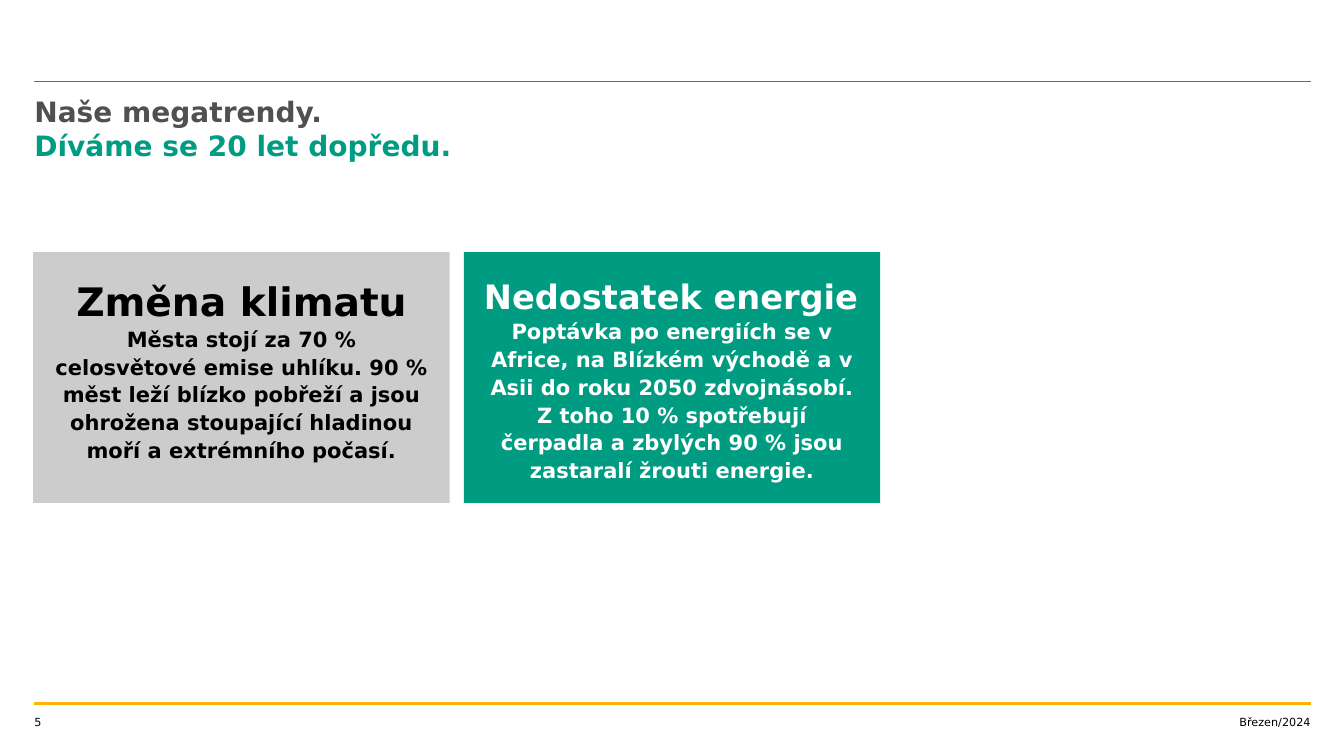
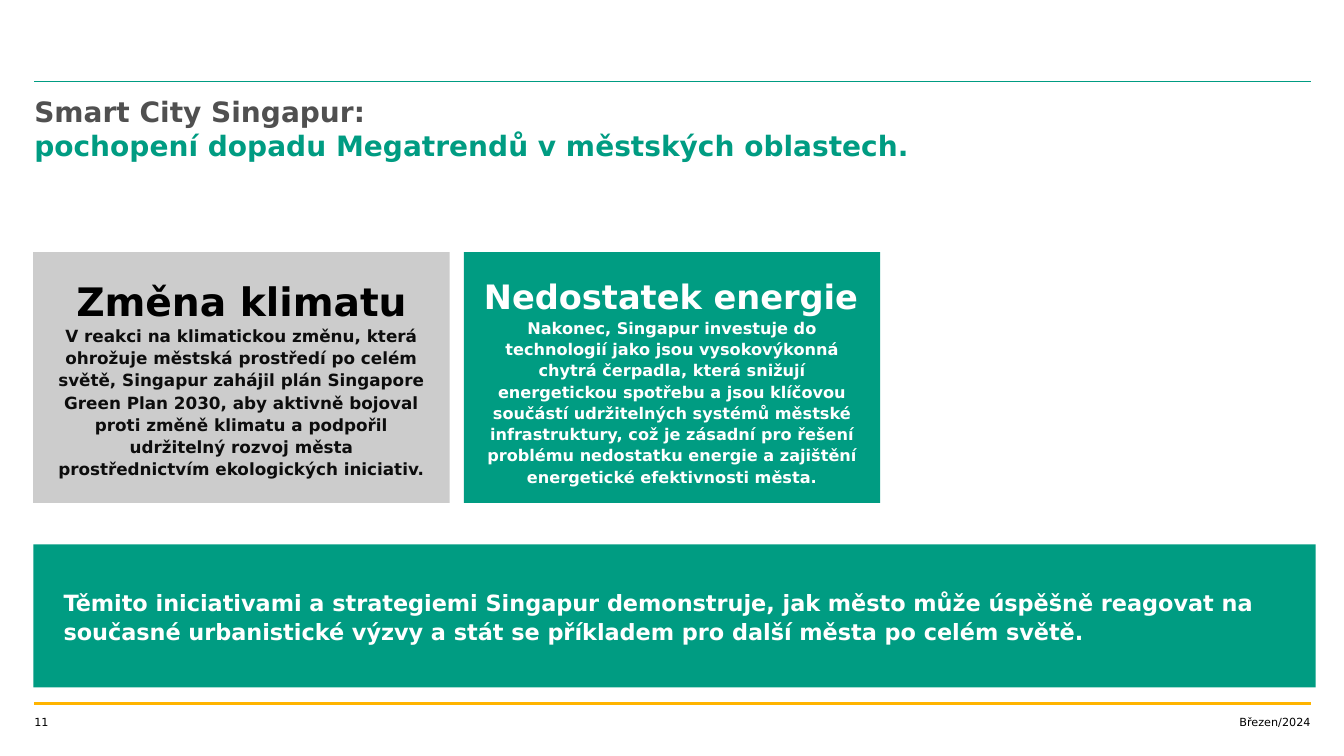
from dataclasses import dataclass

from lxml import etree
from pptx import Presentation
from pptx import util as u
from pptx.dml.color import RGBColor
from pptx.enum import shapes, text
from pptx.oxml.ns import qn


@dataclass(frozen=True)
class Theme:
    font: str = "DejaVu Sans"
    green: str = "009C82"
    amber: str = "FFB400"
    slate: str = "505050"
    silver: str = "CCCCCC"
    black: str = "000000"
    ink: str = "0D0D0D"
    white: str = "FFFFFF"
    title_size: float = 20
    band_size: float = 16
    footer_size: float = 8


theme = Theme()
LEFT, RIGHT = 0.34, 13.0
CARD_LEFT, CARD_TOP, CARD_WIDTH, CARD_HEIGHT, CARD_STEP = 0.33, 2.5, 4.13, 2.49, 4.27

# Both cards: heading, heading size, heading alignment, fill, heading colour
cards = [
    ("Změna klimatu", 28, text.PP_ALIGN.CENTER, theme.silver, theme.black),
    ("Nedostatek energie", 24, text.PP_ALIGN.LEFT, theme.green, theme.white),
]

# Each slide: card bodies are (text, size, colour)
slides = [
    {
        "number": "5",
        "title": ("Naše megatrendy.", "Díváme se 20 let dopředu."),
        "bodies": [
            ("Města stojí za 70 % celosvětové emise uhlíku. 90 % měst leží blízko pobřeží "
             "a jsou ohrožena stoupající hladinou moří a extrémního počasí.", 15, theme.black),
            ("Poptávka po energiích se v Africe, na Blízkém východě a v Asii do roku 2050 "
             "zdvojnásobí. Z toho 10 % spotřebují čerpadla a zbylých 90 % jsou zastaralí "
             "žrouti energie.", 15, theme.white),
        ],
        "band": None,
    },
    {
        "number": "11",
        "title": ("Smart City Singapur:", "pochopení dopadu Megatrendů v městských oblastech."),
        "bodies": [
            ("V reakci na klimatickou změnu, která ohrožuje městská prostředí po celém světě, "
             "Singapur zahájil plán Singapore Green Plan 2030, aby aktivně bojoval proti změně "
             "klimatu a podpořil udržitelný rozvoj města prostřednictvím ekologických iniciativ.",
             12, theme.ink),
            ("Nakonec, Singapur investuje do technologií jako jsou vysokovýkonná chytrá čerpadla, "
             "která snižují energetickou spotřebu a jsou klíčovou součástí udržitelných systémů "
             "městské infrastruktury, což je zásadní pro řešení problému nedostatku energie "
             "a zajištění energetické efektivnosti města.", 11.5, theme.white),
        ],
        "band": "Těmito iniciativami a strategiemi Singapur demonstruje, jak město může úspěšně "
                "reagovat na současné urbanistické výzvy a stát se příkladem pro další města "
                "po celém světě.",
    },
]


def style(span, size, colour, bold=True):
    span.font.name = theme.font
    span.font.size = u.Pt(size)
    span.font.bold = bold
    span.font.color.rgb = RGBColor.from_string(colour)


def fill_box(box, fill, inset, paragraphs, anchor=text.MSO_ANCHOR.TOP, spacing=1.0, bold=True):
    """Fill a box with paragraphs given as (words, size, colour, alignment)."""
    if fill:
        box.shadow.inherit = False
        box.fill.solid()
        box.fill.fore_color.rgb = RGBColor.from_string(fill)
        box.line.fill.background()
    frame = box.text_frame
    frame.word_wrap = True
    frame.vertical_anchor = anchor
    frame.margin_left = frame.margin_right = u.Inches(inset)
    frame.margin_top = frame.margin_bottom = u.Inches(inset)
    frame.text = "\n".join(words for words, *_ in paragraphs)
    for para, (_, size, colour, alignment) in zip(frame.paragraphs, paragraphs):
        para.alignment = alignment
        para.line_spacing = spacing
        style(para.runs[0], size, colour, bold)


deck = Presentation()
deck.slide_width, deck.slide_height = u.Inches(13.33), u.Inches(7.5)

for content in slides:
    page = deck.slides.add_slide(deck.slide_layouts[5])

    # Rules above the title and above the footer
    for top, colour, width in ((6.98, theme.amber, 2), (0.81, theme.green, 1)):
        rule = page.shapes.add_connector(
            shapes.MSO_CONNECTOR.STRAIGHT,
            u.Inches(LEFT), u.Inches(top), u.Inches(RIGHT), u.Inches(top))
        rule.line.color.rgb = RGBColor.from_string(colour)
        rule.line.width = u.Pt(width)
        etree.SubElement(rule.element.spPr, qn("a:effectLst"))

    # Two-coloured title
    title = page.shapes.title
    title.left, title.top = u.Inches(LEFT), u.Inches(0.94)
    title.width, title.height = u.Inches(RIGHT - LEFT), u.Inches(0.71)
    frame = title.text_frame
    frame.auto_size = text.MSO_AUTO_SIZE.NONE
    frame.vertical_anchor = text.MSO_ANCHOR.TOP
    frame.margin_left = frame.margin_right = frame.margin_top = frame.margin_bottom = 0
    para = frame.paragraphs[0]
    para.text = "\v".join(content["title"])
    para.alignment = text.PP_ALIGN.LEFT
    for span, colour in zip(para.runs, (theme.slate, theme.green)):
        style(span, theme.title_size, colour)

    # Megatrend cards
    for column, (card, body) in enumerate(zip(cards, content["bodies"])):
        heading, size, alignment, fill, colour = card
        box = page.shapes.add_shape(
            shapes.MSO_SHAPE.RECTANGLE,
            u.Inches(CARD_LEFT + column * CARD_STEP), u.Inches(CARD_TOP),
            u.Inches(CARD_WIDTH), u.Inches(CARD_HEIGHT))
        fill_box(box, fill, 0.2,
                 [(heading, size, colour, alignment), (*body, text.PP_ALIGN.CENTER)],
                 spacing=1.1)

    # Closing band
    if content["band"]:
        band = page.shapes.add_shape(
            shapes.MSO_SHAPE.RECTANGLE,
            u.Inches(CARD_LEFT), u.Inches(5.4), u.Inches(12.72), u.Inches(1.42))
        fill_box(band, theme.green, 0.1,
                 [(content["band"], theme.band_size, theme.white, text.PP_ALIGN.LEFT)],
                 anchor=text.MSO_ANCHOR.MIDDLE, spacing=1.1)
        band.text_frame.margin_left = u.Inches(0.3)

    # Footer: page number and date
    for words, left, width, alignment in (
            (content["number"], LEFT, 0.4, text.PP_ALIGN.LEFT),
            ("Březen/2024", 10.71, 2.29, text.PP_ALIGN.RIGHT)):
        footer = page.shapes.add_textbox(
            u.Inches(left), u.Inches(7.1), u.Inches(width), u.Inches(0.2))
        fill_box(footer, None, 0,
                 [(words, theme.footer_size, theme.black, alignment)], bold=False)

deck.save("out.pptx")
